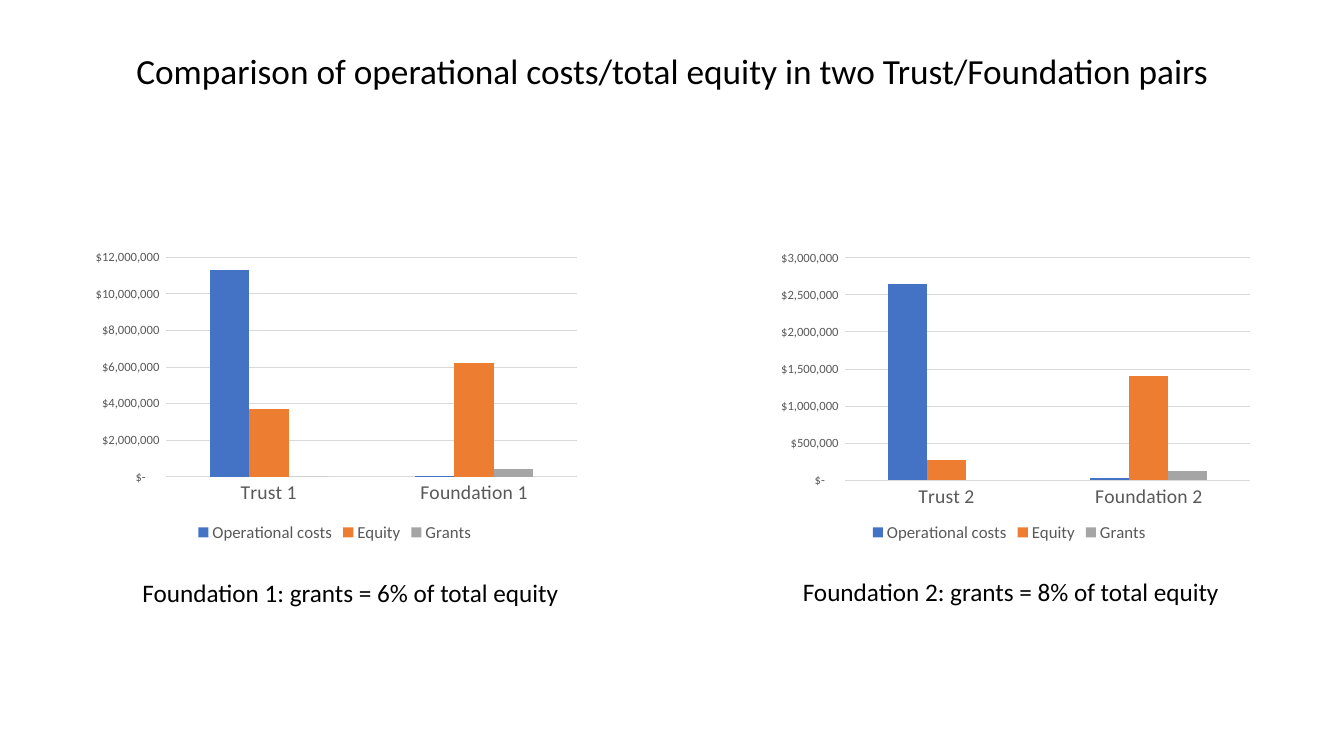
from lxml import etree
from pptx import Presentation
from pptx import util as u
from pptx.chart import data
from pptx.dml import color
from pptx.enum import chart as ch, text

NS = "http://schemas.openxmlformats.org/drawingml/2006/chart"
FMT = '_("$"* #,##0_);_("$"* \\(#,##0\\);_("$"* "-"??_);_(@_)'
SERIES = {"Operational costs": "4472C4", "Equity": "ED7D31", "Grants": "A5A5A5"}


def rgb(code):
    return color.RGBColor.from_string(code)


def style(font, size, code):
    for key, val in {"name": "Calibri", "size": u.Pt(size), "bold": False}.items():
        setattr(font, key, val)
    font.color.rgb = rgb(code)


deck = Presentation()
deck.slide_width, deck.slide_height = u.Inches(13.33), u.Inches(7.5)
slide = deck.slides.add_slide(deck.slide_layouts[6])

# Charts: left, categories, values by series, plot area
pairs = [
    (0.82, ["Trust 1", "Foundation 1"],
     [(11300000, 30000), (3700000, 6200000), (0, 400000)], None),
    (7.51, ["Trust 2", "Foundation 2"],
     [(2650000, 30000), (270000, 1410000), (None, 120000)],
     {"x": 0.175, "y": 0.046, "w": 0.803, "h": 0.736}),
]
for left, cats, rows, area in pairs:
    book = data.CategoryChartData(number_format=FMT)
    book.categories = cats
    for name, vals in zip(SERIES, rows):
        book.add_series(name, vals)
    chart = slide.shapes.add_chart(
        ch.XL_CHART_TYPE.COLUMN_CLUSTERED, u.Inches(left), u.Inches(2.42),
        u.Inches(5), u.Inches(3), book).chart
    chart.has_title = False
    style(chart.font, 10, "000000")

    # Bars
    plot = chart.plots[0]
    plot.gap_width, plot.vary_by_categories = 219, False
    for bar, code in zip(plot.series, SERIES.values()):
        bar.format.fill.solid()
        bar.format.fill.fore_color.rgb = rgb(code)

    # Axes
    cat, val = chart.category_axis, chart.value_axis
    for axis, size in ((cat, 14), (val, 9)):
        axis.major_tick_mark = axis.minor_tick_mark = ch.XL_TICK_MARK.NONE
        style(axis.tick_labels.font, size, "595959")
    val.has_major_gridlines = True
    for line in (cat.format.line, val.major_gridlines.format.line):
        line.color.rgb, line.width = rgb("D9D9D9"), u.Pt(0.75)
    val.format.line.fill.background()
    val.tick_labels.number_format = FMT
    val.tick_labels.number_format_is_linked = False

    # Legend
    chart.has_legend = True
    chart.legend.position = ch.XL_LEGEND_POSITION.BOTTOM
    chart.legend.include_in_layout = False
    style(chart.legend.font, 12, "595959")

    # Fixed plot area
    if area:
        zone = chart.element.find(f".//{{{NS}}}plotArea")
        for old in zone.findall(f"{{{NS}}}layout"):
            zone.remove(old)
        lay = etree.Element(f"{{{NS}}}layout")
        man = etree.SubElement(lay, f"{{{NS}}}manualLayout")
        rule = {"layoutTarget": "inner", "xMode": "edge", "yMode": "edge", **area}
        for tag, num in rule.items():
            etree.SubElement(man, f"{{{NS}}}{tag}", val=str(num))
        zone.insert(0, lay)

# Title and captions
notes = [
    ("Comparison of operational costs/total equity in two Trust/Foundation pairs",
     (0.92, 0.4, 11.5, 0.65), 25.2, 0.9),
    ("Foundation 1: grants = 6% of total equity", (0.92, 5.68, 5.11, 0.4), 18, 1),
    ("Foundation 2: grants = 8% of total equity", (7.47, 5.67, 5.11, 0.4), 18, 1),
]
for words, spot, size, gap in notes:
    frame = slide.shapes.add_textbox(*map(u.Inches, spot)).text_frame
    frame.word_wrap = True
    frame.vertical_anchor = text.MSO_ANCHOR.MIDDLE
    para = frame.paragraphs[0]
    para.alignment, para.line_spacing = text.PP_ALIGN.CENTER, gap
    run = para.add_run()
    run.text = words
    style(run.font, size, "000000")

deck.save("out.pptx")
